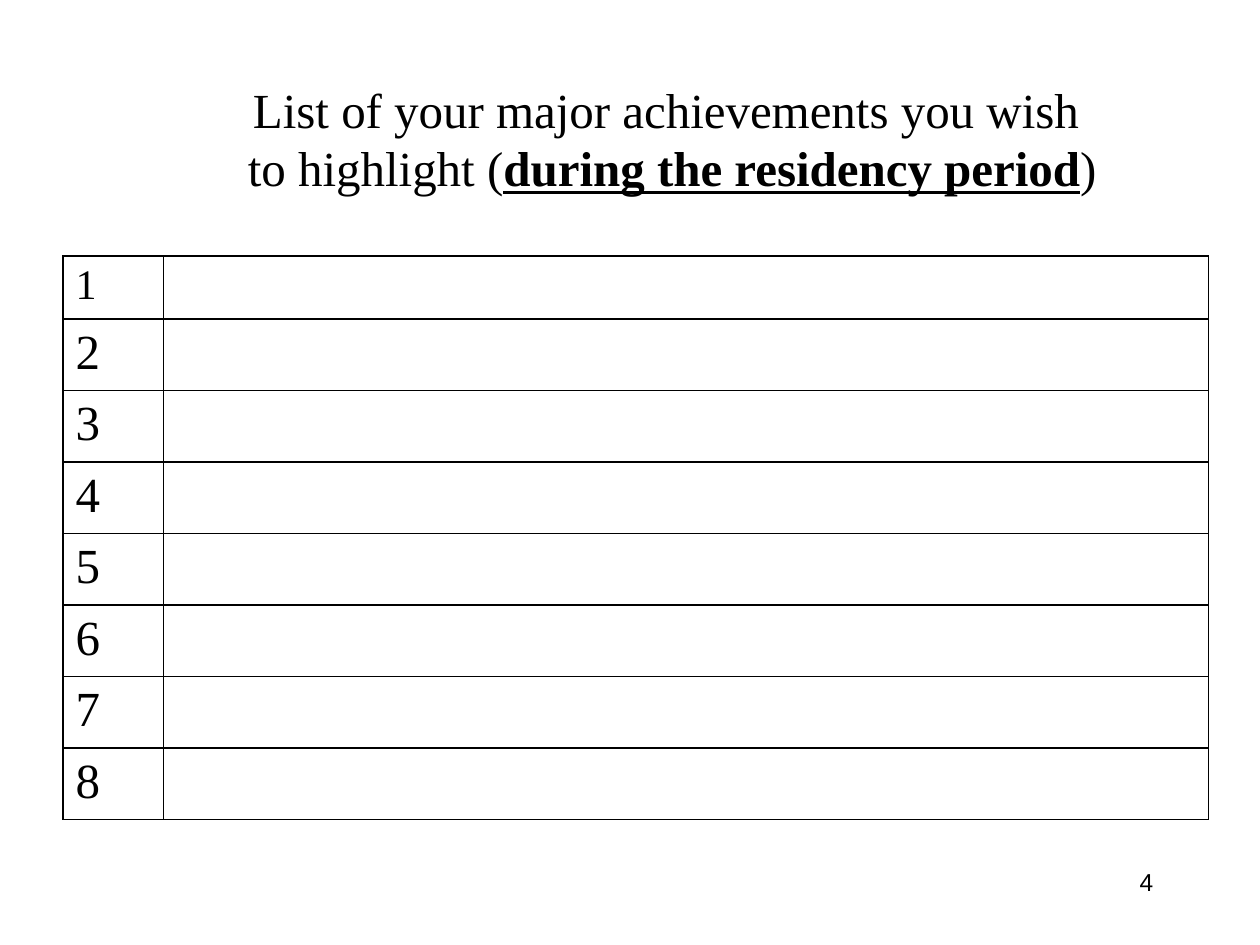
from typing import NamedTuple

from lxml.etree import SubElement
from pptx import Presentation
from pptx.dml.color import RGBColor
from pptx.enum.text import MSO_ANCHOR as Anchor, MSO_AUTO_SIZE as Fit, PP_ALIGN as Align
from pptx.oxml.ns import qn
from pptx.util import Inches, Pt

WIDE, HIGH = Inches(10), Inches(7.5)
COLORS = {"ink": "000000"}
SERIF, SANS = "Times New Roman", "Arial"


class Box(NamedTuple):
    """Place and size as shares of the slide."""
    left: float
    top: float
    width: float
    height: float

    def emu(self) -> tuple[int, ...]:
        return tuple(round(part * side) for part, side in zip(self, (WIDE, HIGH) * 2))


class Row(NamedTuple):
    label: str
    size: int
    height: float


TITLE = Box(0.183, 0.077, 0.701, 0.139)
TABLE = Box(0.05, 0.271, 0.909, 0.596)
NUMBER = Box(0.717, 0.911, 0.208, 0.067)
COLS = (0.088, 0.912)
FIRST = 0.112
REST = (1 - FIRST) / 7
ROWS = [Row("1", 24, FIRST)] + [Row(str(n), 28, REST) for n in range(2, 9)]


def style(run, size: int, face: str = SERIF) -> None:
    run.font.size = Pt(size)
    run.font.name = face
    run.font.color.rgb = RGBColor.from_string(COLORS["ink"])


def add_title(slide) -> None:
    shape = slide.shapes.title
    shape.left, shape.top, shape.width, shape.height = TITLE.emu()
    frame = shape.text_frame
    frame.text = "List of your major achievements you wish "
    frame.word_wrap = False
    frame.auto_size = Fit.SHAPE_TO_FIT_TEXT
    frame.vertical_anchor = Anchor.TOP
    last = frame.add_paragraph()
    for text in ("to highlight (", "during the residency period", ")"):
        last.add_run().text = text
    for para in frame.paragraphs:
        para.alignment = Align.CENTER
        para.space_before = Pt(0)
        for run in para.runs:
            style(run, 28)
    stress = last.runs[1].font
    stress.bold = stress.underline = True


def frame_cell(cell) -> None:
    """Draw a thin line on all four sides, with no fill."""
    props = cell._tc.get_or_add_tcPr()
    for side in ("lnL", "lnR", "lnT", "lnB"):
        line = SubElement(props, qn(f"a:{side}"), w=str(Pt(1)))
        fill = SubElement(line, qn("a:solidFill"))
        SubElement(fill, qn("a:srgbClr"), val=COLORS["ink"])
    cell.fill.background()


def add_grid(slide) -> None:
    left, top, width, height = TABLE.emu()
    table = slide.shapes.add_table(len(ROWS), len(COLS), left, top, width, height).table
    table.first_row = table.horz_banding = False
    for col, share in zip(table.columns, COLS):
        col.width = round(width * share)
    for line, row in zip(table.rows, ROWS):
        line.height = round(height * row.height)
        for cell in line.cells:
            frame_cell(cell)
        label = line.cells[0].text_frame
        label.text = row.label
        style(label.paragraphs[0].runs[0], row.size)


def add_number(slide) -> None:
    frame = slide.shapes.add_textbox(*NUMBER.emu()).text_frame
    frame.text = "4"
    frame.word_wrap = True
    para = frame.paragraphs[0]
    para.alignment = Align.RIGHT
    style(para.runs[0], 14, SANS)


def main() -> None:
    deck = Presentation()
    deck.slide_width, deck.slide_height = WIDE, HIGH
    slide = deck.slides.add_slide(deck.slide_layouts[5])
    add_number(slide)
    add_title(slide)
    add_grid(slide)
    deck.save("out.pptx")


if __name__ == "__main__":
    main()
